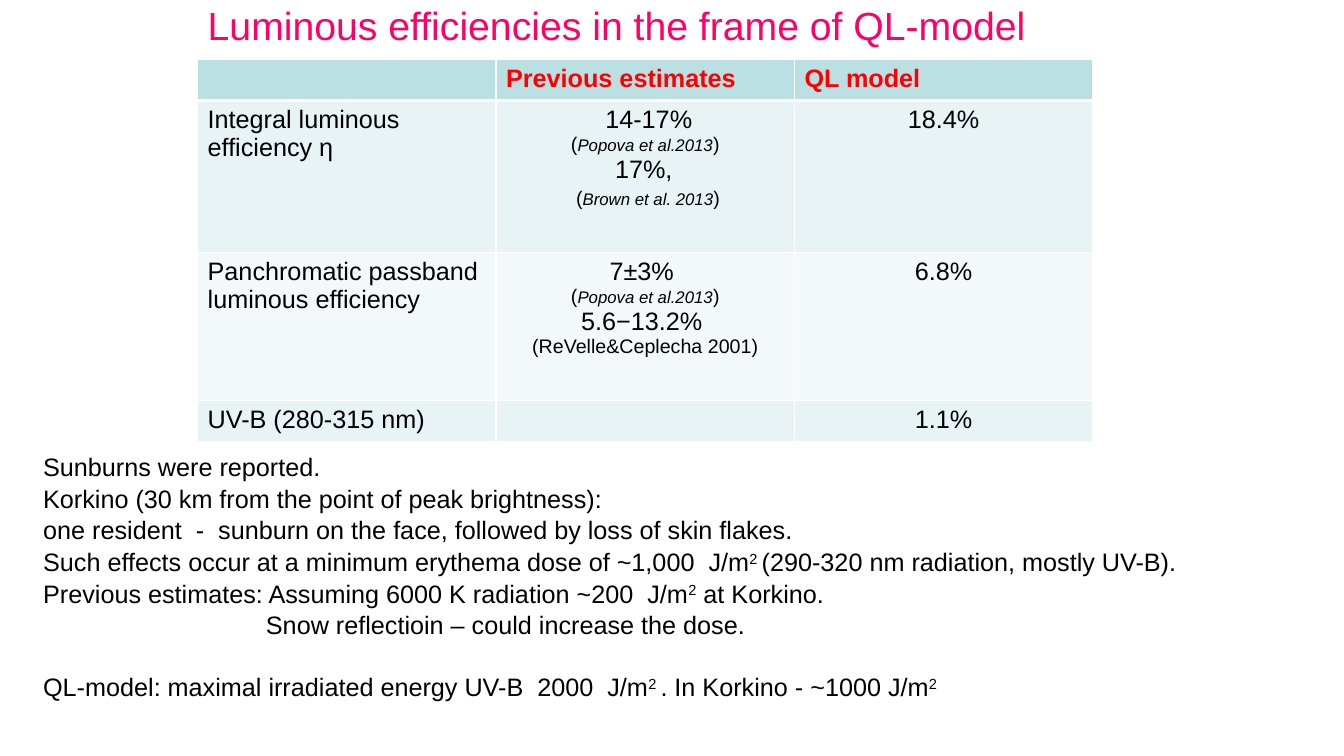
from dataclasses import dataclass
from typing import NamedTuple

from lxml import etree
from pptx import Presentation
from pptx import util as u
from pptx.dml.color import RGBColor
from pptx.enum import text
from pptx.oxml.ns import qn


@dataclass(frozen=True)
class Theme:
    font: str = "Arial"
    ink: str = "000000"
    title: str = "FF0066"
    heading: str = "FF0000"
    border: str = "FFFFFF"
    header_fill: str = "BBE0E3"
    bands: tuple = ("E7F3F4", "F3F9FA")
    title_size: int = 28
    body_size: int = 18
    note_size: int = 14
    citation_size: int = 12


THEME = Theme()


class Run(NamedTuple):
    words: str
    size: int = THEME.body_size
    color: str = THEME.ink
    bold: bool = False
    italic: bool = False
    baseline: int = 0  # percent: raised above zero, lowered below


class Line(NamedTuple):
    runs: list
    centered: bool = False
    indent: float = 0
    before: float = 0
    after: float = 0


class Row(NamedTuple):
    height: float
    fill: str
    cells: list


def write(paragraph, words: str, *, size: int, color: str, bold: bool = False,
          italic: bool = False, baseline: int = 0) -> None:
    run = paragraph.add_run()
    run.text = words
    font = run.font
    font.name, font.size = THEME.font, u.Pt(size)
    font.bold, font.italic = bold, italic
    font.color.rgb = RGBColor.from_string(color)
    if baseline:
        run._r.get_or_add_rPr().set("baseline", str(baseline * 1000))


def fill_frame(frame, lines: list[Line]) -> None:
    for number, line in enumerate(lines):
        paragraph = frame.add_paragraph() if number else frame.paragraphs[0]
        paragraph.alignment = text.PP_ALIGN.CENTER if line.centered else text.PP_ALIGN.LEFT
        paragraph.space_before = u.Pt(line.before)
        paragraph.space_after = u.Pt(line.after)
        if line.indent:
            paragraph._p.get_or_add_pPr().set("marL", str(u.Inches(line.indent)))
        for run in line.runs:
            write(paragraph, **run._asdict())


def draw_border(cell, side: str, width: float) -> None:
    edge = etree.SubElement(cell._tc.get_or_add_tcPr(), qn(f"a:ln{side}"), w=str(u.Pt(width)))
    paint = etree.SubElement(edge, qn("a:solidFill"))
    etree.SubElement(paint, qn("a:srgbClr"), val=THEME.border)


def draw_table(slide, left: float, top: float, column_width: float, rows: list[Row]) -> None:
    columns = len(rows[0].cells)
    table = slide.shapes.add_table(
        len(rows), columns, u.Inches(left), u.Inches(top),
        u.Inches(column_width * columns), u.Inches(sum(row.height for row in rows))).table
    for column in table.columns:
        column.width = u.Inches(column_width)
    for y, row in enumerate(rows):
        table.rows[y].height = u.Inches(row.height)
        for x, lines in enumerate(row.cells):
            cell = table.cell(y, x)
            fill_frame(cell.text_frame, lines)
            # The rule under the header is heavier than the rest
            for side in "LRTB":
                heavy = (y, side) in ((0, "B"), (1, "T"))
                draw_border(cell, side, 3 if heavy else 1)
            cell.fill.solid()
            cell.fill.fore_color.rgb = RGBColor.from_string(row.fill)


def heading(words: str) -> list[Line]:
    return [Line([Run(words, color=THEME.heading, bold=True)])]


def label(words: str) -> list[Line]:
    return [Line([Run(words)])]


def value(words: str) -> Line:
    return Line([Run(words)], centered=True)


def citation(source: str, opening: str = "(") -> Line:
    return Line([Run(opening, THEME.note_size),
                 Run(source, THEME.citation_size, italic=True),
                 Run(")", THEME.note_size)], centered=True)


def note(*runs: Run, **spacing: float) -> Line:
    return Line(list(runs), **{"after": 1, **spacing})


SQUARED = Run("2", baseline=30)
SQUARED_SPACE = Run("2 ", baseline=30)

EFFICIENCIES = [
    Row(0.4, THEME.header_fill, [[], heading("Previous estimates"), heading("QL model")]),
    Row(1.51, THEME.bands[0], [
        label("Integral luminous efficiency η"),
        [value(" 14-17%"), citation("Popova et al.2013"),
         Line([Run(" ", baseline=-25), Run("17%, ")], centered=True),
         citation("Brown et al. 2013", " (")],
        [value("18.4%")]]),
    Row(1.47, THEME.bands[1], [
        label("Panchromatic passband luminous efficiency"),
        [value("7±3% "), citation("Popova et al.2013"), value("5.6−13.2% "),
         Line([Run("(ReVelle&Ceplecha 2001)", THEME.note_size)], centered=True)],
        [value("6.8%")]]),
    Row(0.4, THEME.bands[0], [label("UV-B (280-315 nm)"), [], [value("1.1%")]]),
]

SUNBURN_NOTES = [
    note(Run("Sunburns were reported.")),
    note(Run("Korkino (30 km from the point of peak brightness):")),
    note(Run("one resident  -  sunburn on the face, followed by loss of skin flakes.")),
    note(Run("Such effects occur at a minimum erythema dose of ~1,000  J/m"), SQUARED_SPACE,
         Run("(290-320 nm radiation, mostly UV-B).")),
    note(Run("Previous estimates: Assuming 6000 K radiation ~200  J/m"), SQUARED,
         Run(" at Korkino.")),
    note(Run("Snow reflectioin – could increase the dose."), indent=2.21),
    note(Run("QL-model: maximal irradiated energy UV-B  2000  J/m"), SQUARED_SPACE,
         Run(". In Korkino - ~1000 J/m"), SQUARED, before=21.6),
]


def main() -> None:
    deck = Presentation()
    deck.slide_width, deck.slide_height = u.Inches(13.33), u.Inches(7.5)
    slide = deck.slides.add_slide(deck.slide_layouts[5])

    # Title
    title = slide.shapes.title
    title.left, title.top = u.Inches(1.96), u.Inches(-0.04)
    title.width, title.height = u.Inches(8.64), u.Inches(0.57)
    title.text_frame.auto_size = text.MSO_AUTO_SIZE.NONE
    title.text_frame.vertical_anchor = text.MSO_ANCHOR.TOP
    fill_frame(title.text_frame, [
        Line([Run("Luminous efficiencies in the frame of QL-model",
                  THEME.title_size, THEME.title)])])

    # Efficiency table
    draw_table(slide, 1.96, 0.59, 2.96, EFFICIENCIES)

    # Sunburn notes
    notes = slide.shapes.add_textbox(
        u.Inches(0.33), u.Inches(4.43), u.Inches(12.56), u.Inches(2.52)).text_frame
    notes.word_wrap = True
    fill_frame(notes, SUNBURN_NOTES)

    deck.save("out.pptx")


if __name__ == "__main__":
    main()
